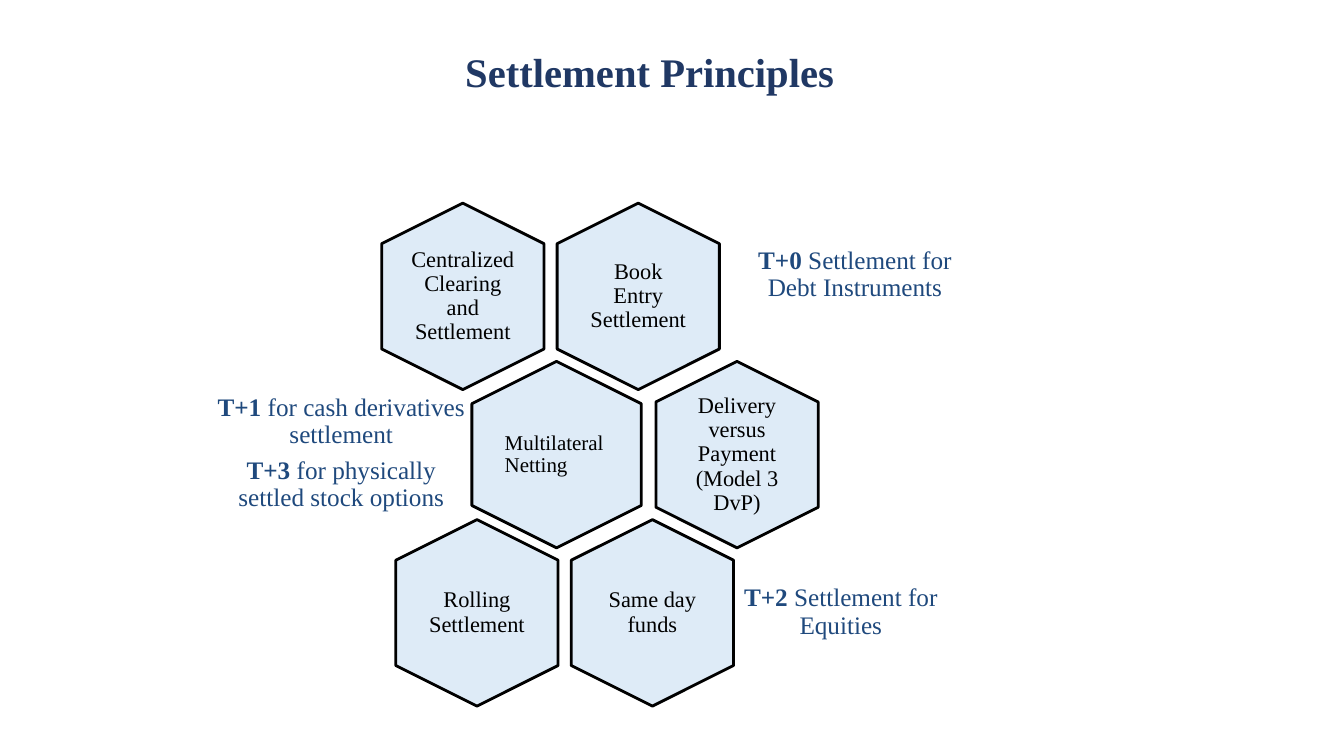
from pptx import Presentation
from pptx.dml.color import RGBColor
from pptx.enum.shapes import MSO_SHAPE
from pptx.enum.text import MSO_ANCHOR, PP_ALIGN
from pptx.util import Inches, Pt

FONT = "Times New Roman"
NAVY, BLUE, PALE, BLACK = "203864", "1F497D", "DEEBF7", "000000"
COL, ROW, TOP = 1.74, 1.57, 2.94
HEX_W, HEX_H = 1.61, 1.85
LABEL_W, LABEL_H, NOTE_H = 1.11, 1.27, 1.11

# Each row: centre of its first cell, then (text, inset) per cell.
ROWS = [
    (4.59, [("Centralized Clearing and Settlement", 0), ("Book Entry Settlement", 0.07)]),
    (5.52, [("Multilateral Netting", 0.06), ("Delivery versus Payment (Model 3 DvP)", 0)]),
    (4.73, [("Rolling Settlement", 0), ("Same day funds", 0.07)]),
]
NOTES = [
    (7.18, 2.17, 2.6, [("T+0", " Settlement for Debt Instruments")]),
    (2.05, 3.94, 2.67, [("T+1", " for cash derivatives settlement"),
                        ("T+3", " for physically settled stock options")]),
    (7.31, 5.52, 2.06, [("T+2", " Settlement for Equities")]),
]


def rgb(value):
    """Turn a hex string into a colour."""
    return RGBColor.from_string(value)


def add_text(s, box, paragraphs, size, color, inset=0.07, align=PP_ALIGN.CENTER):
    """Place paragraphs, each a (bold, regular) pair, in a box."""
    tf = s.shapes.add_textbox(*map(Inches, box)).text_frame
    tf.word_wrap = True
    tf.vertical_anchor = MSO_ANCHOR.MIDDLE
    tf.margin_left = tf.margin_right = tf.margin_top = tf.margin_bottom = Inches(inset)
    for i, parts in enumerate(paragraphs):
        p = tf.paragraphs[0] if i == 0 else tf.add_paragraph()
        p.alignment, p.line_spacing, p.space_after = align, 0.9, Pt(size * 0.35)
        for text, bold in zip(parts, (True, False)):
            if text:
                r = p.add_run()
                r.text = text
                r.font.name, r.font.size, r.font.bold = FONT, Pt(size), bold
                r.font.color.rgb = rgb(color)


def add_cell(s, cx, cy, text, inset, netting=False):
    """Draw an upright hexagon and its label around a centre."""
    width = 1.68 if netting else HEX_W
    sp = s.shapes.add_shape(MSO_SHAPE.HEXAGON, Inches(cx - HEX_H / 2), Inches(cy - width / 2),
                            Inches(HEX_H), Inches(width))
    sp.rotation = 90
    sp.adjustments[0] = 0.25
    sp.shadow.inherit = False
    sp.fill.solid()
    sp.fill.fore_color.rgb = rgb(PALE)
    sp.line.color.rgb = rgb(BLACK)
    sp.line.width = Pt(2)
    label_w = 1.15 if netting else LABEL_W
    add_text(s, (cx - label_w / 2, cy - LABEL_H / 2, label_w, LABEL_H), [("", text)],
             15 if netting else 16, BLACK, inset, PP_ALIGN.LEFT if netting else PP_ALIGN.CENTER)


def add_honeycomb(s, top):
    """Lay out the rows of hexagons from the top centre line."""
    for row, (start, cells) in enumerate(ROWS):
        for col, (text, inset) in enumerate(cells):
            netting = text == "Multilateral Netting"
            gap = 1.79 if row == 1 else COL
            add_cell(s, start + col * gap, top + row * ROW, text, inset, netting)


def main():
    """Build and save the slide."""
    prs = Presentation()
    prs.slide_width, prs.slide_height = Inches(13.33), Inches(7.5)
    s = prs.slides.add_slide(prs.slide_layouts[6])
    add_honeycomb(s, TOP)
    for left, top, width, paragraphs in NOTES:
        add_text(s, (left, top, width, NOTE_H), paragraphs, 18, BLUE)
    add_text(s, (4.45, 0.47, 3.99, 0.54), [("Settlement Principles", "")], 29, NAVY, 0.05)
    prs.save("out.pptx")


if __name__ == "__main__":
    main()
